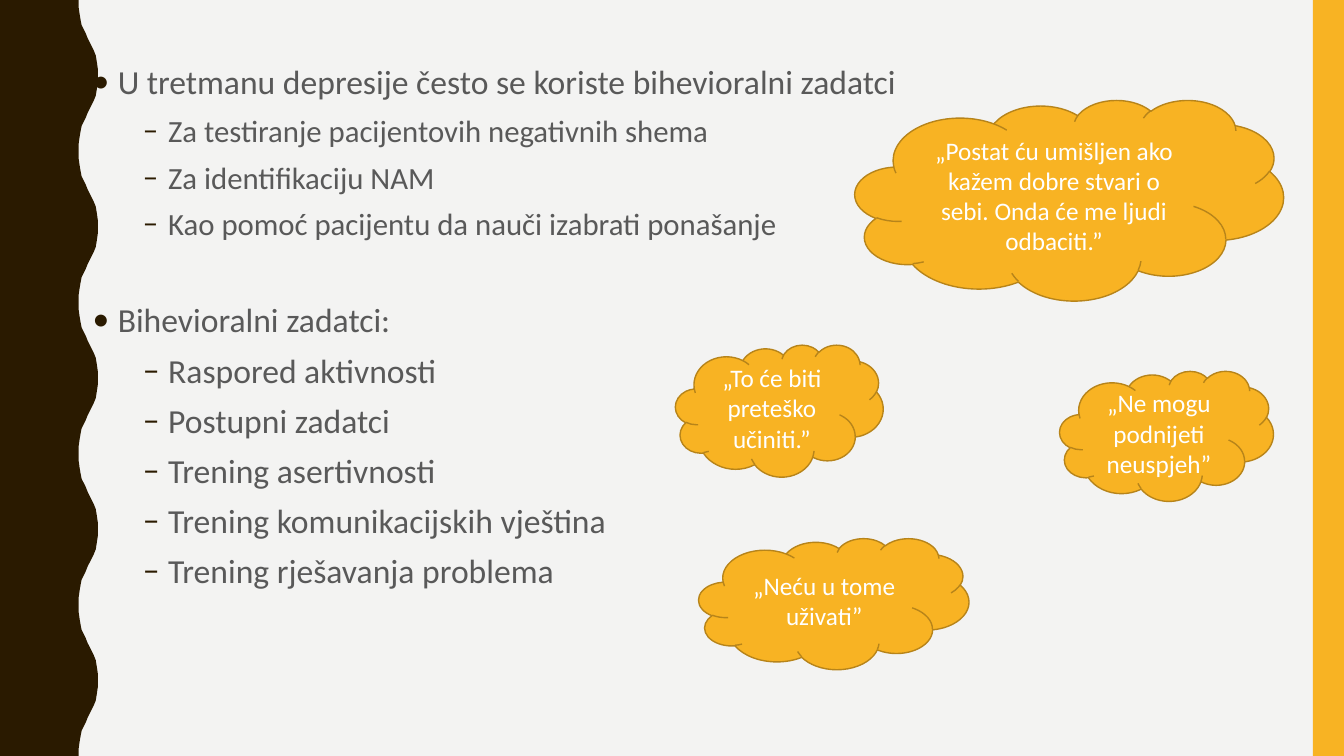
import pptx
import pptx.dml.color
import pptx.enum.shapes
import pptx.enum.text
import pptx.oxml
import pptx.oxml.ns
import pptx.util

Inches = pptx.util.Inches
Pt = pptx.util.Pt
MSO_SHAPE = pptx.enum.shapes.MSO_SHAPE
PP_ALIGN = pptx.enum.text.PP_ALIGN
MSO_ANCHOR = pptx.enum.text.MSO_ANCHOR

COLORS = {
    "background": "F3F3F2",
    "brown": "2A1A00",
    "amber": "F8B323",
    "outline": "B7841A",
    "text": "595959",
    "white": "FFFFFF",
}

# level, size, space before, text
OUTLINE = [
    (0, 24, 7, "U tretmanu depresije često se koriste bihevioralni zadatci"),
    (1, 22, 7, "Za testiranje pacijentovih negativnih shema"),
    (1, 22, 7, "Za identifikaciju NAM"),
    (1, 22, 7, "Kao pomoć pacijentu da nauči izabrati ponašanje"),
    (0, 24, 41, "Bihevioralni zadatci:"),
    (1, 24, 7, "Raspored aktivnosti"),
    (1, 24, 7, "Postupni zadatci"),
    (1, 24, 7, "Trening asertivnosti"),
    (1, 24, 7, "Trening komunikacijskih vještina"),
    (1, 24, 7, "Trening rješavanja problema"),
]

THOUGHTS = [
    (6.93, 5.34, 2.68, 1.3, "„Neću u tome uživati”"),
    (10.51, 3.68, 2.12, 1.29, "„Ne mogu podnijeti neuspjeh”"),
    (8.48, 0.99, 4.25, 1.99,
     "„Postat ću umišljen ako kažem dobre stvari o sebi. Onda će me ljudi odbaciti.”"),
    (6.7, 3.42, 2.06, 1.31, "„To će biti preteško učiniti.”"),
]

# Half a wave of the left edge, from trough to crest
HALF_WAVE = [
    (0.78, 0), (0.78, 0.07), (0.79, 0.14), (0.8, 0.2), (0.81, 0.25),
    (0.83, 0.29), (0.85, 0.33), (0.87, 0.38), (0.89, 0.42), (0.91, 0.46),
    (0.93, 0.5), (0.95, 0.55), (0.96, 0.61), (0.97, 0.68), (0.97, 0.75),
]
WAVE_LENGTH = 1.5
WAVE_COUNT = 5


class SlideBuilder:
    def __init__(self, prs, font):
        self.s = prs.slides.add_slide(prs.slide_layouts[6])
        self.font = font

    def color(self, name):
        return pptx.dml.color.RGBColor.from_string(COLORS[name])

    def background(self, name):
        fill = self.s.background.fill
        fill.solid()
        fill.fore_color.rgb = self.color(name)

    def paint(self, sp, fill, line=None):
        sp.shadow.inherit = False
        sp.fill.solid()
        sp.fill.fore_color.rgb = self.color(fill)
        if line:
            sp.line.color.rgb = self.color(line)
            sp.line.width = Pt(1)
        else:
            sp.line.fill.background()

    def format_runs(self, p, size, color):
        for r in p.runs:
            r.font.name = self.font
            r.font.size = Pt(size)
            r.font.color.rgb = self.color(color)

    def shape(self, kind, box, fill, line=None):
        sp = self.s.shapes.add_shape(kind, *map(Inches, box))
        self.paint(sp, fill, line)
        return sp

    def wavy_band(self, fill):
        """Fill the left edge of the slide up to a repeating wave."""
        wave = HALF_WAVE + [(x, WAVE_LENGTH - y) for x, y in HALF_WAVE[-2::-1]]
        points = [(x, y + i * WAVE_LENGTH) for i in range(WAVE_COUNT) for x, y in wave]
        points.append((0, WAVE_COUNT * WAVE_LENGTH))
        builder = self.s.shapes.build_freeform(0, 0)
        builder.add_line_segments([(Inches(x), Inches(y)) for x, y in points], close=True)
        self.paint(builder.convert_to_shape(), fill)

    def bullet(self, p, level):
        pPr = p._p.get_or_add_pPr()
        pPr.set("marL", str(Inches(0.25 + 0.5 * level)))
        pPr.set("indent", str(-Inches(0.25)))
        ns = pptx.oxml.ns.nsdecls("a")
        for xml in (
            f'<a:buClr {ns}><a:srgbClr val="{COLORS["brown"]}"/></a:buClr>',
            f'<a:buFont {ns} typeface="{self.font}"/>',
            f'<a:buChar {ns} char="{"•–"[level]}"/>',
        ):
            pPr.append(pptx.oxml.parse_xml(xml))

    def bullet_list(self, box, items):
        tf = self.s.shapes.add_textbox(*map(Inches, box)).text_frame
        tf.word_wrap = True
        tf.text = "\n".join(text for *_, text in items)
        for p, (level, size, space, _) in zip(tf.paragraphs, items):
            p.level = level
            p.space_before = Pt(space)
            self.bullet(p, level)
            self.format_runs(p, size, "text")

    def thought(self, box, text):
        tf = self.shape(MSO_SHAPE.CLOUD, box, "amber", "outline").text_frame
        tf.word_wrap = True
        tf.vertical_anchor = MSO_ANCHOR.MIDDLE
        tf.text = text
        p = tf.paragraphs[0]
        p.alignment = PP_ALIGN.CENTER
        self.format_runs(p, 18, "white")


def main():
    prs = pptx.Presentation()
    prs.slide_width, prs.slide_height = Inches(13.33), Inches(7.5)
    slide = SlideBuilder(prs, "Calibri")
    slide.background("background")
    slide.wavy_band("brown")
    slide.shape(MSO_SHAPE.RECTANGLE, (13.02, 0, 0.31, 7.5), "amber")
    slide.bullet_list((0.82, 0.56, 11.13, 5.7), OUTLINE)
    for *box, text in THOUGHTS:
        slide.thought(box, text)
    prs.save("out.pptx")


if __name__ == "__main__":
    main()
